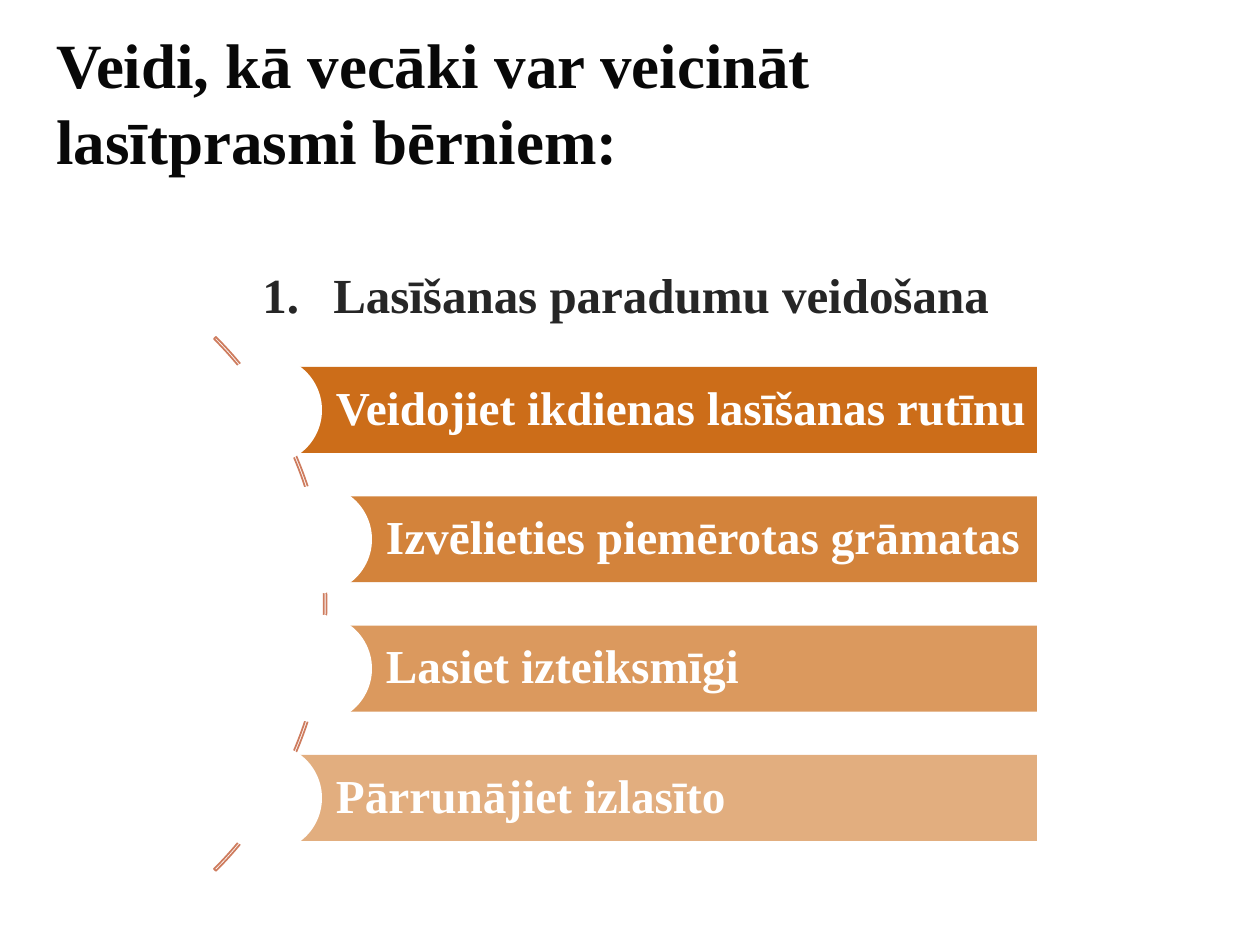
from lxml.etree import SubElement
from pptx import Presentation
from pptx.dml.color import RGBColor
from pptx.enum.shapes import MSO_SHAPE
from pptx.enum.text import MSO_ANCHOR, PP_ALIGN
from pptx.oxml.ns import qn
from pptx.util import Pt

EMU_PER_PX = 7257.14
FONT = "Times New Roman"
COLORS = {
    "title": "080808",
    "heading": "262626",
    "bar": "C75E00",
    "arc": "CE7C5E",
    "white": "FFFFFF",
}
STEPS = [
    ("Veidojiet ikdienas lasīšanas rutīnu", 90, 0),
    ("Izvēlieties piemērotas grāmatas", 77, 50),
    ("Lasiet izteiksmīgi", 63, 50),
    ("Pārrunājiet izlasīto", 50, 0),
]


def px(length):
    return round(length * EMU_PER_PX)


def rgb(name):
    return RGBColor.from_string(COLORS[name])


def write(shape, text, size, color, align=PP_ALIGN.LEFT, anchor=MSO_ANCHOR.MIDDLE):
    frame = shape.text_frame
    frame.word_wrap = True
    frame.vertical_anchor = anchor
    paragraph = frame.paragraphs[0]
    paragraph.text = text
    paragraph.alignment = align
    paragraph.font.name = FONT
    paragraph.font.size = Pt(size)
    paragraph.font.bold = True
    paragraph.font.color.rgb = rgb(color)
    return paragraph


def add_filled(slide, kind, box, color, opacity=100):
    shape = slide.shapes.add_shape(kind, *map(px, box))
    shape.shadow.inherit = False
    shape.line.fill.background()
    shape.fill.solid()
    shape.fill.fore_color.rgb = rgb(color)
    if opacity < 100:
        fill_color = shape.fill._xPr.find(qn("a:solidFill"))[0]
        SubElement(fill_color, qn("a:alpha"), val=str(opacity * 1000))
    return shape


def add_title(slide, left, top, width, height):
    title = slide.shapes.add_textbox(*map(px, (left, top, width, height)))
    write(title, "Veidi, kā vecāki var veicināt lasītprasmi bērniem:", 36, "title")


def add_heading(slide, left, top, width, height):
    heading = slide.shapes.add_textbox(*map(px, (left, top, width, height)))
    indent = px(71)
    heading.text_frame.word_wrap = True
    properties = heading.text_frame.paragraphs[0]._p.get_or_add_pPr()
    properties.set("marL", str(indent))
    properties.set("indent", str(-indent))
    SubElement(properties, qn("a:buFont"), typeface="+mj-lt")
    SubElement(properties, qn("a:buAutoNum"), type="arabicPeriod")
    write(heading, "Lasīšanas paradumu veidošana", 28, "heading",
          PP_ALIGN.CENTER, MSO_ANCHOR.TOP)


def add_arc(slide, center_x, center_y, diameter):
    radius = diameter / 2
    arc = slide.shapes.add_shape(
        MSO_SHAPE.BLOCK_ARC,
        *map(px, (center_x - radius, center_y - radius, diameter, diameter)))
    arc.shadow.inherit = False
    arc.fill.background()
    arc.line.color.rgb = rgb("arc")
    arc.line.width = Pt(1)
    for index, value in enumerate((189, 27, 0.0036)):
        arc.adjustments[index] = value


def add_step(slide, left, top, width, height, text, opacity):
    bar = add_filled(slide, MSO_SHAPE.RECTANGLE, (left, top, width, height), "bar", opacity)
    frame = bar.text_frame
    frame.margin_left = px(68)
    frame.margin_top = frame.margin_right = frame.margin_bottom = px(9)
    write(bar, text, 27, "white").line_spacing = 0.9
    diameter = 108
    circle_box = (left - diameter / 2, top + (height - diameter) / 2, diameter, diameter)
    add_filled(slide, MSO_SHAPE.OVAL, circle_box, "white")


def add_steps(slide, left, top, width, height):
    bar_height = 86
    pitch = (height - bar_height) / (len(STEPS) - 1)
    add_arc(slide, left - 319, top + height / 2, 755)
    for index, (text, opacity, shift) in enumerate(STEPS):
        add_step(slide, left + shift, top + index * pitch, width - shift,
                 bar_height, text, opacity)


def main():
    presentation = Presentation()
    presentation.slide_width = px(1260)
    presentation.slide_height = px(945)
    slide = presentation.slides.add_slide(presentation.slide_layouts[6])
    add_title(slide, 44, 66, 1022, 71)
    add_heading(slide, 15, 258, 1221, 664)
    add_steps(slide, 268, 367, 769, 474)
    presentation.save("out.pptx")


if __name__ == "__main__":
    main()
